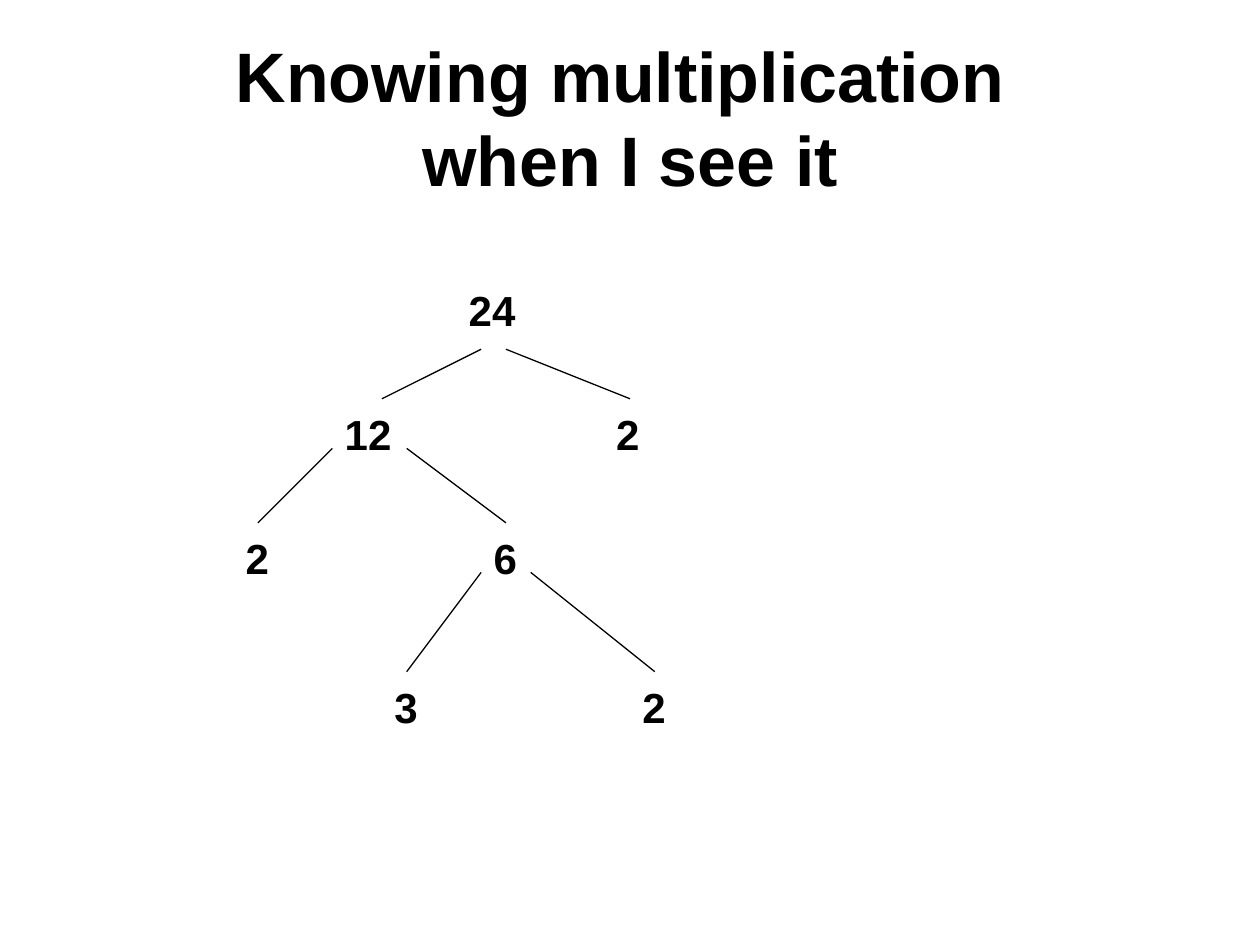
import pptx
import pptx.dml.color
import pptx.enum.shapes
import pptx.enum.text
import pptx.oxml.ns
import pptx.util
import lxml.etree

Cm = pptx.util.Cm
Pt = pptx.util.Pt
INK = "000000"
TITLE = "Knowing multiplication \vwhen I see it"

# Factor tree in cm from its corner: text, left, top, extra left inset
NODES = [
    ("24", 4.5, 0, 0),
    ("12", 2, 2.5, 0),
    ("2", 7, 2.5, 0.47),
    ("2", 0, 5, 0),
    ("6", 5, 5, 0),
    ("3", 3, 8, 0),
    ("2", 8, 8, 0),
]
# Branches: start x, start y, end x, end y
BRANCHES = [
    (5, 1.5, 3, 2.5),
    (5.5, 1.5, 8, 2.5),
    (2, 3.5, 0.5, 5),
    (3.5, 3.5, 5.5, 5),
    (5, 6, 3.5, 8),
    (6, 6, 8.5, 8),
]


def color(hex_text):
    return pptx.dml.color.RGBColor.from_string(hex_text)


def add_text(page, text, left, top, width, height, size):
    box = page.shapes.add_textbox(Cm(left), Cm(top), Cm(width), Cm(height))
    frame = box.text_frame
    frame.word_wrap = True
    para = frame.paragraphs[0]
    para.text = text
    para.font.name = "Arial"
    para.font.size = Pt(size)
    para.font.bold = True
    para.font.color.rgb = color(INK)
    return frame


def add_branch(page, start_x, start_y, end_x, end_y):
    line = page.shapes.add_connector(
        pptx.enum.shapes.MSO_CONNECTOR.STRAIGHT,
        Cm(start_x), Cm(start_y), Cm(end_x), Cm(end_y))
    line.line.color.rgb = color(INK)
    line.line.width = Pt(0.75)
    properties = line._element.spPr
    lxml.etree.SubElement(properties, pptx.oxml.ns.qn("a:effectLst"))


def add_title(page, left, top, width, height):
    frame = add_text(page, TITLE, left, top, width, height, 40)
    frame.vertical_anchor = pptx.enum.text.MSO_ANCHOR.MIDDLE
    frame.paragraphs[0].alignment = pptx.enum.text.PP_ALIGN.CENTER


def add_factor_tree(page, left, top):
    for start_x, start_y, end_x, end_y in BRANCHES:
        add_branch(page, left + start_x, top + start_y, left + end_x, top + end_y)
    for text, x, y, inset in NODES:
        frame = add_text(page, text, left + x, top + y, 2, 1.27, 24)
        frame.margin_left = Cm(0.25 + inset)
        frame.margin_top = Cm(0.2)


def main():
    deck = pptx.Presentation()
    deck.slide_width, deck.slide_height = Cm(25.4), Cm(19.05)
    page = deck.slides.add_slide(deck.slide_layouts[6])
    add_title(page, 1.27, 0.76, 22.86, 3.18)
    add_factor_tree(page, 4.7, 5.54)
    deck.save("out.pptx")


if __name__ == "__main__":
    main()
